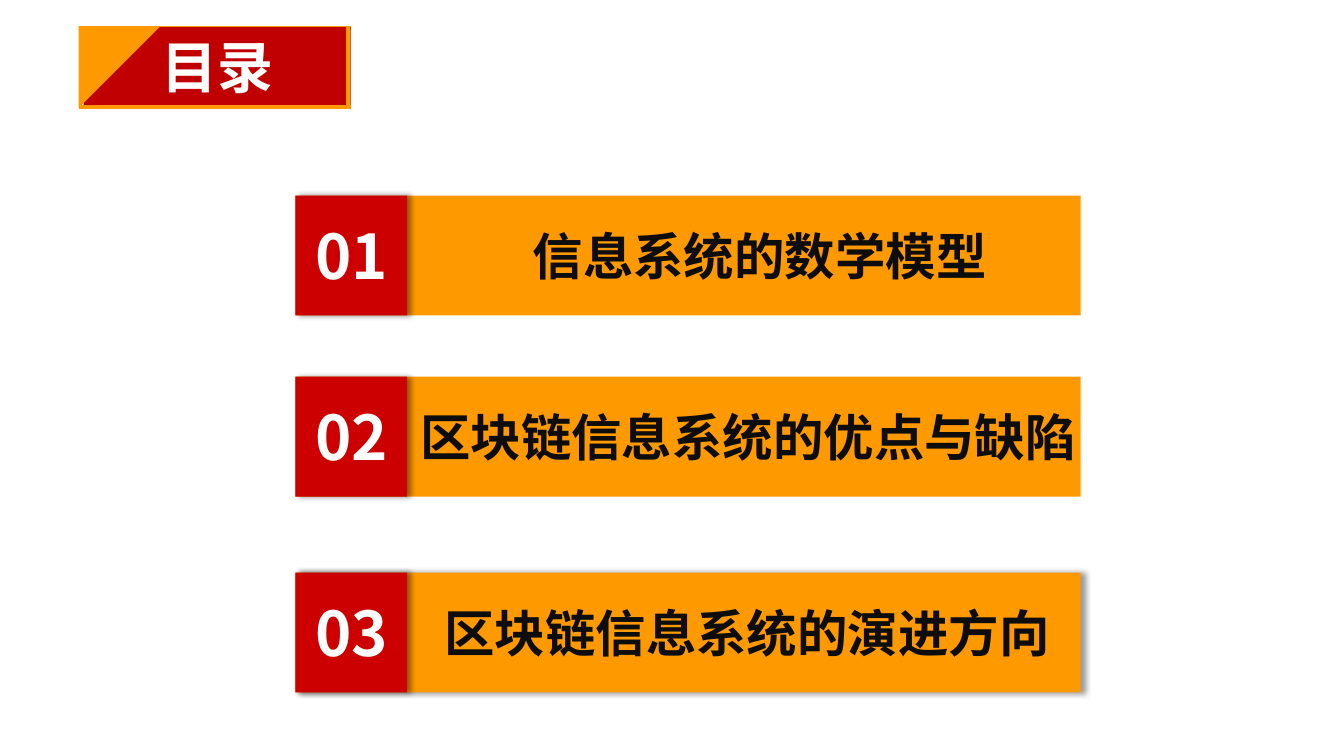
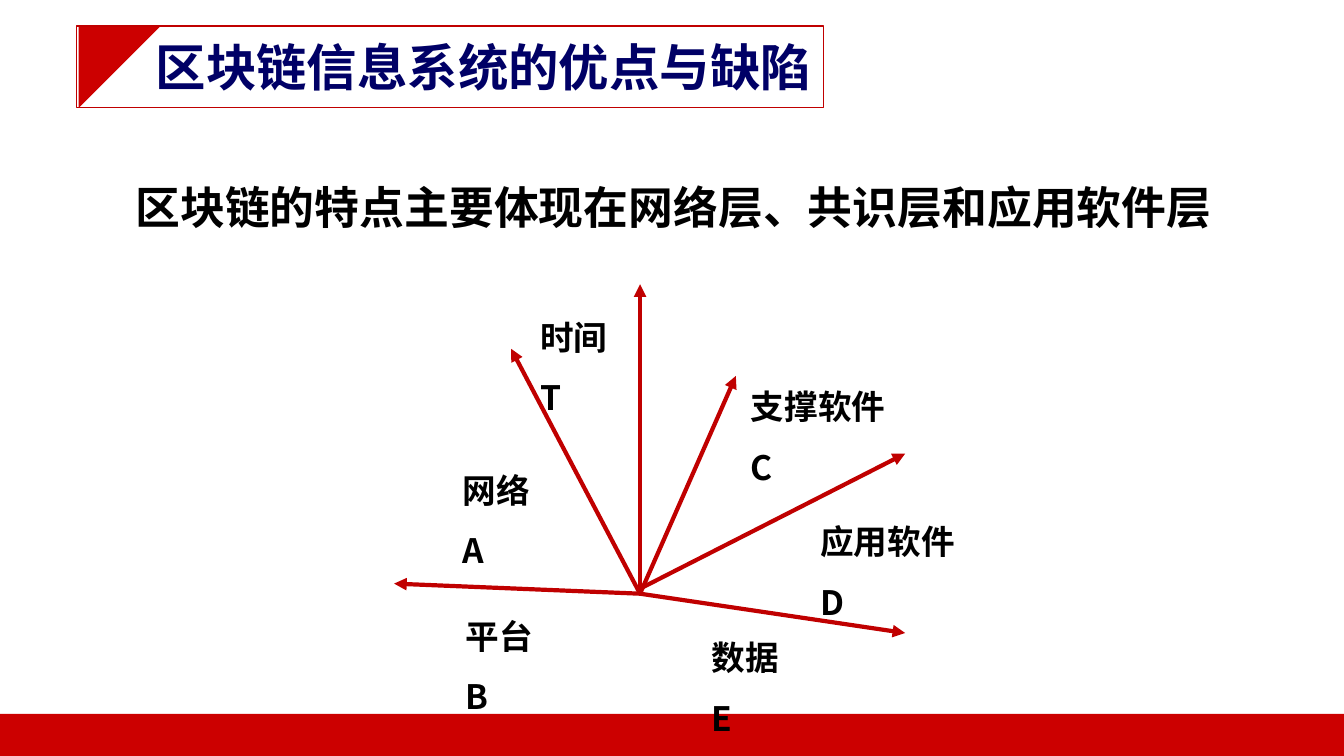
from lxml import etree
from pptx import Presentation
from pptx import util as u
from pptx.dml.color import RGBColor
from pptx.enum import shapes, text
from pptx.oxml.ns import qn

COLS, ROWS = 160, 90
FONT = "Noto Sans CJK SC"
RED, DARK_RED, ORANGE = "CC0000", "C00000", "FF9900"
WHITE, BLACK, INK, NAVY = "FFFFFF", "000000", "0D0D0D", "000066"
RECT = shapes.MSO_SHAPE.RECTANGLE
CENTER, LEFT = text.PP_ALIGN.CENTER, text.PP_ALIGN.LEFT


def rgb(value):
    return RGBColor.from_string(value)


def child(parent, tag, **attrs):
    return etree.SubElement(parent, qn(tag), attrs)


class Deck:
    def __init__(self):
        self.prs = Presentation()
        self.prs.slide_width = u.Inches(13.33)
        self.prs.slide_height = u.Inches(7.5)
        self.s = None

    def slide(self):
        self.s = self.prs.slides.add_slide(self.prs.slide_layouts[6])

    def x(self, cols):
        return round(self.prs.slide_width * cols / COLS)

    def y(self, rows):
        return round(self.prs.slide_height * rows / ROWS)

    def box(self, x, y, w, h):
        return self.x(x), self.y(y), self.x(w), self.y(h)

    def shape(self, at, fill=None, line=None, kind=RECT, rotation=0, shadow=False):
        sp = self.s.shapes.add_shape(kind, *self.box(*at))
        sp.rotation = rotation
        if fill:
            sp.fill.solid()
            sp.fill.fore_color.rgb = rgb(fill)
        else:
            sp.fill.background()
        if line:
            sp.line.color.rgb = rgb(line)
            sp.line.width = u.Pt(1)
        else:
            sp.line.fill.background()
        sp.shadow.inherit = False
        if shadow:
            effects = sp._element.spPr.find(qn("a:effectLst"))
            outer = child(effects, "a:outerShdw", blurRad=str(u.Pt(4)),
                          dist=str(u.Pt(3)), dir="0", algn="l", rotWithShape="0")
            color = child(outer, "a:srgbClr", val=BLACK)
            child(color, "a:alpha", val="40000")
        return sp

    def fill_text(self, sp, lines, size, color, align=CENTER, spacing=None):
        tf = sp.text_frame
        tf.word_wrap = True
        tf.auto_size = text.MSO_AUTO_SIZE.NONE
        tf.vertical_anchor = text.MSO_ANCHOR.TOP
        p = tf.paragraphs[0]
        p.alignment = align
        if spacing:
            p.line_spacing = spacing
        for i, line in enumerate(lines):
            if i:
                p.add_line_break()
            r = p.add_run()
            r.text = line
            r.font.name = FONT
            r.font.size = u.Pt(size)
            r.font.bold = True
            r.font.color.rgb = rgb(color)
            child(r.font._element, "a:ea", typeface=FONT)

    def text(self, at, lines, size, color, **style):
        sp = self.s.shapes.add_textbox(*self.box(*at))
        self.fill_text(sp, lines, size, color, **style)

    def line(self, start, end, color, arrow=False):
        (x1, y1), (x2, y2) = start, end
        c = self.s.shapes.add_connector(shapes.MSO_CONNECTOR.STRAIGHT, self.x(x1),
                                        self.y(y1), self.x(x2), self.y(y2))
        c.line.color.rgb = rgb(color)
        c.line.width = u.Pt(3)
        props = c._element.spPr
        if arrow:
            child(props.find(qn("a:ln")), "a:tailEnd", type="triangle")
        child(props, "a:effectLst")

    def corner(self, color):
        self.shape((9.36, 3.12, 9.72, 9.72), color,
                   kind=shapes.MSO_SHAPE.RIGHT_TRIANGLE, rotation=90)

    def agenda_item(self, number, top, label, center, shadow):
        left, height, width = 35.16, 14.28, 82.56
        self.shape((left, top, 93.48, height), ORANGE, shadow=shadow)
        self.shape((left, top, 13.32, height), RED, shadow=True)
        self.text((left + 0.72, top + 2.04, 12, 10.08), [f"{number:02}"], 44, WHITE)
        self.text((center - width / 2, top + 2.9, width, 8.52), [label], 36, INK)


def agenda(deck):
    deck.slide()
    right, bottom = 41.76, 12.72
    deck.line((9.36, bottom), (right, bottom), ORANGE)
    deck.line((17.04, 3.36), (right, 3.36), ORANGE)
    title = deck.shape((9.96, 3.24, 31.8, 9.24), DARK_RED)
    deck.fill_text(title, ["目录"], 40, WHITE)
    items = [
        (23.28, "信息系统的数学模型", 90.42, False),
        (44.84, "区块链信息系统的优点与缺陷", 89.04, False),
        (68.16, "区块链信息系统的演进方向", 88.92, True),
    ]
    for number, item in enumerate(items, 1):
        deck.agenda_item(number, *item)
    deck.line((41.4, 3.12), (41.4, bottom), ORANGE)
    deck.corner(ORANGE)


def features(deck):
    deck.slide()
    deck.shape((0, 85, COLS, 5), RED)
    deck.corner(RED)
    deck.shape((9.12, 3.12, 88.92, 9.72), line=DARK_RED)
    deck.text((10.68, 3.72, 93.72, 8.52), ["区块链信息系统的优点与缺陷"], 36, NAVY)
    origin = (76.2, 70.68)
    tips = [(76.2, 33.84), (60.84, 41.52), (46.92, 69.48), (87.6, 44.76), (107.76, 75.36)]
    for tip in tips:
        deck.line(origin, tip, DARK_RED, arrow=True)
    deck.line((76.2, 70.08), (107.76, 54), DARK_RED, arrow=True)
    axes = [
        (54.24, 70.32, "平台", "B"),
        (53.88, 52.92, "网络", "A"),
        (63.12, 34.68, "时间", "T"),
        (88.2, 42.96, "支撑软件", "C"),
        (96.48, 59.04, "应用软件", "D"),
        (83.52, 72.84, "数据", "E"),
    ]
    for x, y, name, letter in axes:
        width = 4.6 + 4.3 * len(name)
        deck.text((x, y, width, 7.68), [name, letter], 24, BLACK, align=LEFT, spacing=1.5)
    deck.text((6.12, 20.76, 148.2, 7.68),
              ["区块链的特点主要体现在网络层、共识层和应用软件层"], 32, BLACK)


def main():
    deck = Deck()
    agenda(deck)
    features(deck)
    deck.prs.save("out.pptx")


if __name__ == "__main__":
    main()
